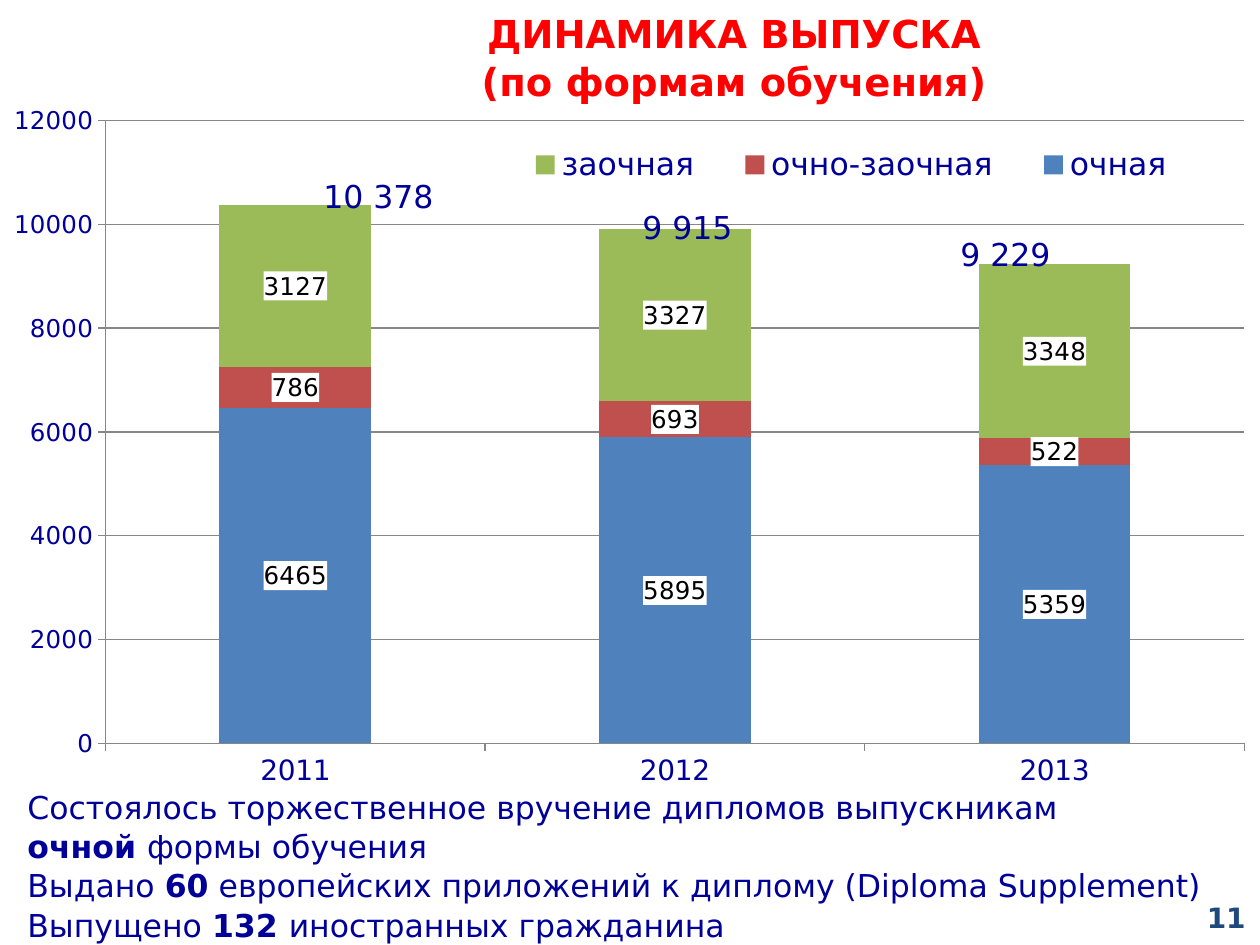
from pptx import Presentation
from pptx import util as u
from pptx.chart.data import CategoryChartData
from pptx.dml.color import RGBColor
from pptx.enum import chart as ch
from pptx.enum import text
from pptx.oxml import parse_xml
from pptx.oxml.ns import nsdecls

NAVY = RGBColor(0x00, 0x00, 0x99)
RED = RGBColor(0xFF, 0x00, 0x00)
BLUE = RGBColor(0x1F, 0x49, 0x7D)
BLACK = RGBColor(0x00, 0x00, 0x00)
WHITE = RGBColor(0xFF, 0xFF, 0xFF)
GRAY = RGBColor(0x87, 0x87, 0x87)
FORMS = [
    ("очная", (6465, 5895, 5359), RGBColor(0x4F, 0x81, 0xBD)),
    ("очно-заочная", (786, 693, 522), RGBColor(0xC0, 0x50, 0x4D)),
    ("заочная", (3127, 3327, 3348), RGBColor(0x9B, 0xBB, 0x59)),
]
YEARS = ("2011", "2012", "2013")
TOTALS = [("10 378", 311, 169), ("9 915", 630, 200), ("9 229", 948, 227)]
TITLE = [[("ДИНАМИКА ВЫПУСКА", True)], [("(по формам обучения)", True)]]
SUMMARY = [
    [("Состоялось торжественное вручение дипломов выпускникам", False)],
    [("очной ", True), ("формы обучения", False)],
    [("Выдано ", False), ("60", True),
     (" европейских приложений к диплому (Diploma Supplement)", False)],
    [("Выпущено ", False), ("132 ", True), ("иностранных гражданина", False)],
]


def px(n):
    return round(n * 914400 / 126)


class Deck:
    font = "DejaVu Sans"

    def __init__(self):
        self.prs = Presentation()
        self.prs.slide_width = u.Inches(10)
        self.prs.slide_height = u.Inches(7.5)
        self.s = self.prs.slides.add_slide(self.prs.slide_layouts[5])

    def style(self, font, size, color, bold=False, name=font):
        values = {"name": name, "size": u.Pt(size), "bold": bold}
        for key, value in values.items():
            setattr(font, key, value)
        font.color.rgb = color

    def lines(self, sp, lines, size, color, align, frame):
        tf = sp.text_frame
        for key, value in {"word_wrap": True, **frame}.items():
            setattr(tf, key, value)
        p = tf.paragraphs[0]
        p.alignment = align
        p.line_spacing = 1.04
        for i, line in enumerate(lines):
            if i:
                p.add_line_break()
            for content, bold in line:
                r = p.add_run()
                r.text = content
                self.style(r.font, size, color, bold)

    def title(self, lines, box):
        sp = self.s.shapes.title
        for key, value in zip(("left", "top", "width", "height"), box):
            setattr(sp, key, px(value))
        self.lines(sp, lines, 22, RED, text.PP_ALIGN.CENTER, {
            "vertical_anchor": text.MSO_ANCHOR.MIDDLE,
            "auto_size": text.MSO_AUTO_SIZE.NONE})

    def text(self, lines, box, size=18, color=NAVY,
             align=text.PP_ALIGN.LEFT, **frame):
        sp = self.s.shapes.add_textbox(*map(px, box))
        self.lines(sp, lines, size, color, align, frame)

    def layout(self, parent, x, y, w, h, inner=False):
        for old in parent.findall("{*}layout"):
            parent.remove(old)
        target = '<c:layoutTarget val="inner"/>' if inner else ""
        node = parse_xml(
            f'<c:layout {nsdecls("c")}><c:manualLayout>{target}'
            '<c:xMode val="edge"/><c:yMode val="edge"/>'
            f'<c:x val="{x}"/><c:y val="{y}"/><c:w val="{w}"/><c:h val="{h}"/>'
            '</c:manualLayout></c:layout>')
        if inner:
            parent.insert(0, node)
        else:
            parent.find("{*}legendPos").addnext(node)

    def label_fill(self, labels):
        labels.find("{*}txPr").addprevious(parse_xml(
            f'<c:spPr {nsdecls("c", "a")}><a:solidFill>'
            f'<a:srgbClr val="{WHITE}"/></a:solidFill></c:spPr>'))

    def chart(self, forms, box):
        data = CategoryChartData()
        data.categories = YEARS
        for name, values, _ in forms:
            data.add_series(name, values)
        chart = self.s.shapes.add_chart(
            ch.XL_CHART_TYPE.COLUMN_STACKED, *map(px, box), data).chart
        self.style(chart.font, 10, BLACK, name="Calibri")
        chart.has_title = False
        plot = chart.plots[0]
        for key, value in {"gap_width": 150, "overlap": 100,
                           "vary_by_categories": False}.items():
            setattr(plot, key, value)
        for series, (_, _, color) in zip(plot.series, forms):
            series.format.fill.solid()
            series.format.fill.fore_color.rgb = color
            series.data_labels.show_value = True
            self.style(series.data_labels.font, 14, BLACK)
        for labels in chart.element.findall(".//{*}ser/{*}dLbls"):
            self.label_fill(labels)
        for axis, size in ((chart.category_axis, 16), (chart.value_axis, 14)):
            axis.major_tick_mark = ch.XL_TICK_MARK.OUTSIDE
            axis.format.line.color.rgb = GRAY
            self.style(axis.tick_labels.font, size, NAVY)
        for key, value in {"minimum_scale": 0, "maximum_scale": 12000,
                           "major_unit": 2000,
                           "has_major_gridlines": True}.items():
            setattr(chart.value_axis, key, value)
        chart.value_axis.major_gridlines.format.line.color.rgb = GRAY
        chart.has_legend = True
        legend = chart.legend
        legend.position = ch.XL_LEGEND_POSITION.RIGHT
        legend.include_in_layout = False
        self.style(legend.font, 18, NAVY)
        area = chart.element.find(".//{*}plotArea")
        self.layout(area, 0.073, 0.02, 0.927, 0.912, inner=True)
        self.layout(chart.element.find(".//{*}legend"), 0.39, 0.05, 0.58, 0.07)


def main():
    deck = Deck()
    deck.title(TITLE, (213, 6, 1042, 100))
    deck.chart(FORMS, (14, 106, 1231, 684))
    deck.text([[("11", True)]], (964, 892, 294, 50), 16, BLUE,
              text.PP_ALIGN.RIGHT, vertical_anchor=text.MSO_ANCHOR.MIDDLE)
    grow = text.MSO_AUTO_SIZE.SHAPE_TO_FIT_TEXT
    for total, left, top in TOTALS:
        deck.text([[(total, False)]], (left, top, 139, 50), auto_size=grow)
    deck.text(SUMMARY, (15, 780, 1230, 204), auto_size=grow)
    deck.prs.save("out.pptx")


if __name__ == "__main__":
    main()
